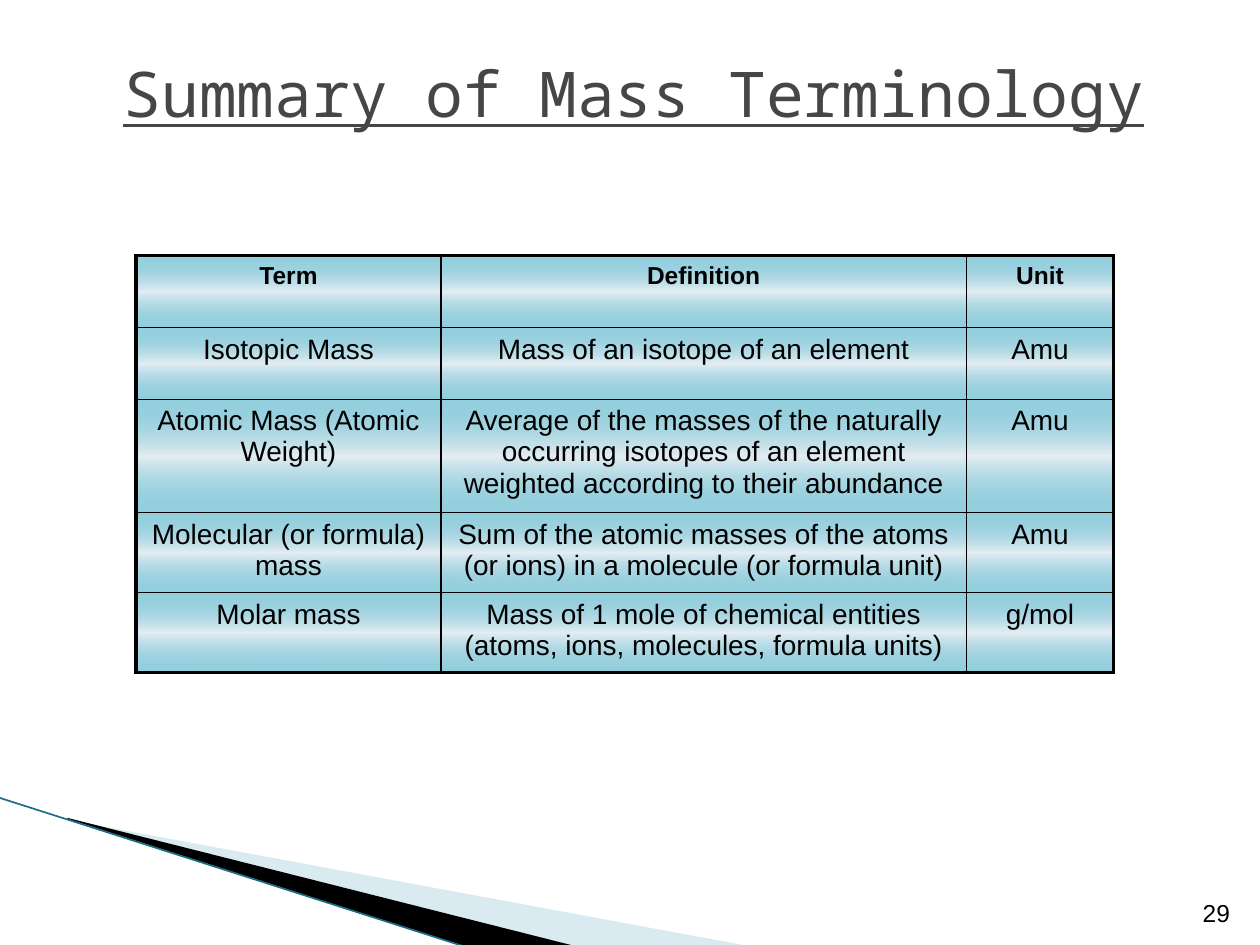
"""Build a slide with a summary table of mass terminology."""
from lxml import etree
from pptx import Presentation
from pptx import util as u
from pptx.dml.color import RGBColor
from pptx.enum import shapes, text
from pptx.oxml import ns

COLORS = {
    "black": "000000",
    "title": "464646",
    "pale": "A0CBDC",
    "edge": "1B6F82",
    "teal": "2DA2BF",
    "mist": "E5EEF3",
}
COLUMN_WIDTHS = [2.42, 4.17, 1.17]
ROW_HEIGHT = 0.57
THIN, THICK = 1, 2.25
ROWS = [
    ["Term", "Definition", "Unit"],
    ["Isotopic Mass", "Mass of an isotope of an element", "Amu"],
    ["Atomic Mass (Atomic Weight)",
     "Average of the masses of the naturally occurring isotopes of an element "
     "weighted according to their abundance", "Amu"],
    ["Molecular (or formula) mass",
     "Sum of the atomic masses of the atoms (or ions) in a molecule (or formula unit)",
     "Amu"],
    ["Molar mass",
     "Mass of 1 mole of chemical entities (atoms, ions, molecules, formula units)",
     "g/mol"],
]


def rgb(name):
    return RGBColor.from_string(COLORS[name])


def add_element(parent, tag, **attributes):
    element = etree.SubElement(parent, ns.qn(tag))
    for key, value in attributes.items():
        element.set(key, str(value))
    return element


def add_color(parent, name, opacity=100):
    color = add_element(parent, "a:srgbClr", val=COLORS[name])
    if opacity < 100:
        add_element(color, "a:alpha", val=opacity * 1000)


def write_text(frame, words, size=16, font="Arial", color="black", bold=False,
               underline=False, align=text.PP_ALIGN.CENTER):
    frame.word_wrap = True
    para = frame.paragraphs[0]
    para.alignment = align
    span = para.add_run()
    span.text = words
    span.font.size = u.Pt(size)
    span.font.name = font
    span.font.bold = bold
    span.font.underline = underline
    span.font.color.rgb = rgb(color)


def add_text(page, words, left, top, width, height, anchor, **style):
    box = page.shapes.add_textbox(*map(u.Inches, (left, top, width, height)))
    box.text_frame.vertical_anchor = anchor
    write_text(box.text_frame, words, **style)


def add_wedge(page, points, color, opacity=100):
    start, *others = [(u.Inches(x), u.Inches(y)) for x, y in points]
    builder = page.shapes.build_freeform(*start)
    builder.add_line_segments(others, close=True)
    wedge = builder.convert_to_shape()
    wedge.shadow.inherit = False
    wedge.line.fill.background()
    wedge.fill.solid()
    wedge.fill.fore_color.rgb = rgb(color)
    if opacity < 100:
        fill = wedge.fill._xPr.find(ns.qn("a:solidFill"))
        add_element(fill[0], "a:alpha", val=opacity * 1000)


def add_line(page, start, end, color, width):
    line = page.shapes.add_connector(
        shapes.MSO_CONNECTOR.STRAIGHT, *map(u.Inches, start + end))
    line.line.color.rgb = rgb(color)
    line.line.width = u.Pt(width)
    add_element(line._element.spPr, "a:effectLst")


def format_cell(cell, borders):
    properties = cell._tc.get_or_add_tcPr()
    for side, width in borders.items():
        line = add_element(properties, f"a:ln{side}", w=u.Pt(width))
        add_color(add_element(line, "a:solidFill"), "black")
    gradient = add_element(properties, "a:gradFill", rotWithShape=1)
    stops = add_element(gradient, "a:gsLst")
    for place, name, opacity in ((0, "teal", 50), (50, "mist", 100), (100, "teal", 50)):
        add_color(add_element(stops, "a:gs", pos=place * 1000), name, opacity)
    add_element(gradient, "a:lin", ang=90 * 60000, scaled=1)


def add_terms_table(page, left, top):
    last_row, last_column = len(ROWS) - 1, len(COLUMN_WIDTHS) - 1
    table = page.shapes.add_table(
        len(ROWS), len(COLUMN_WIDTHS), u.Inches(left), u.Inches(top),
        u.Inches(sum(COLUMN_WIDTHS)), u.Inches(ROW_HEIGHT * len(ROWS))).table
    table.first_row = table.horz_banding = False
    for column, width in zip(table.columns, COLUMN_WIDTHS):
        column.width = u.Inches(width)
    for i, row in enumerate(ROWS):
        table.rows[i].height = u.Inches(ROW_HEIGHT)
        for j, words in enumerate(row):
            cell = table.cell(i, j)
            write_text(cell.text_frame, words, size=16 if i else 14, bold=i == 0)
            format_cell(cell, {
                "L": THIN if j else THICK,
                "R": THICK if j == last_column else THIN,
                "T": THIN if i else THICK,
                "B": THICK if i == last_row else THIN,
            })


def main():
    deck = Presentation()
    deck.slide_width, deck.slide_height = u.Inches(10), u.Inches(7.5)
    page = deck.slides.add_slide(deck.slide_layouts[6])
    add_wedge(page, [(0.55, 6.51), (5.95, 7.51), (4.56, 7.51), (0.55, 6.5)], "pale", 40)
    add_wedge(page, [(0.53, 6.49), (4.57, 7.51), (3.72, 7.52), (0.54, 6.5)], "black")
    add_line(page, (-0.01, 6.33), (3.71, 7.52), "edge", 0.95)
    add_text(page, "29", 9.25, 7.01, 0.61, 0.4, text.MSO_ANCHOR.BOTTOM,
             size=14, align=text.PP_ALIGN.RIGHT)
    add_text(page, "Summary of Mass Terminology", 0.53, 0.25, 9, 0.97,
             text.MSO_ANCHOR.MIDDLE, size=36, font="Noto Sans Mono",
             color="title", underline=True)
    add_terms_table(page, 1.08, 2.03)
    deck.save("out.pptx")


if __name__ == "__main__":
    main()
